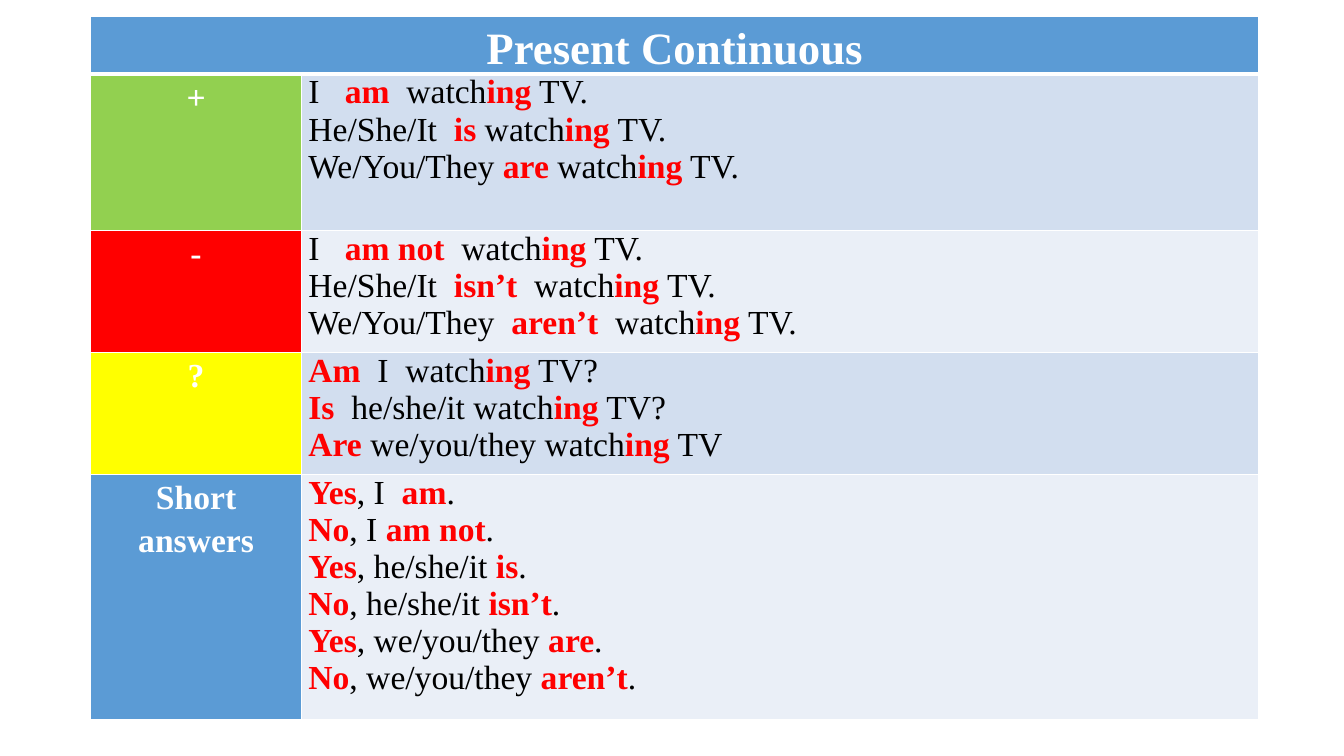
from dataclasses import dataclass

from lxml import etree
from pptx import Presentation
from pptx.dml.color import RGBColor
from pptx.enum.text import MSO_ANCHOR, PP_ALIGN
from pptx.oxml.ns import qn
from pptx.table import _Cell
from pptx.util import Pt

CENTER = PP_ALIGN.CENTER
LEFT = PP_ALIGN.LEFT
TOP = MSO_ANCHOR.TOP

FONT = "Times New Roman"
COLORS = {
    "white": "FFFFFF",
    "black": "000000",
    "red": "FF0000",
    "green": "92D050",
    "yellow": "FFFF00",
    "blue": "5B9BD5",
    "dark band": "D2DEEF",
    "light band": "EAEFF7",
}
COLUMN_WIDTHS = (150.5, 684)
HEADER_HEIGHT = 40.4
THIN, THICK = 1, 3
MARK = "*"


@dataclass(frozen=True)
class GrammarRow:
    label: str
    label_fill: str
    sentence_fill: str
    height: float
    sentences: tuple[str, ...]


GRAMMAR_ROWS = (
    GrammarRow("+", "green", "dark band", 111.6, (
        "I   *am*  watch*ing* TV.",
        "He/She/It  *is* watch*ing* TV.",
        "We/You/They *are* watch*ing* TV.",
    )),
    GrammarRow("-", "red", "light band", 87.1, (
        "I   *am not  *watch*ing* TV.",
        "He/She/It  *isn’t*  watch*ing* TV.",
        "We/You/They  *aren’t*  watch*ing* TV.",
    )),
    GrammarRow("?", "yellow", "dark band", 87.1, (
        "*Am*  I  watch*ing* TV?",
        "*Is*  he/she/it watch*ing* TV?",
        "*Are* we/you/they watch*ing* TV",
    )),
    GrammarRow("Short answers", "blue", "light band", 175.2, (
        "*Yes*, I  *am*.",
        "*No*, I *am not*.",
        "*Yes*, he/she/it *is*.",
        "*No*, he/she/it *isn’t*.",
        "*Yes*, we/you/they *are*.",
        "*No*, we/you/they *aren’t*.",
    )),
)


def style_cell(cell: _Cell, fill: str, top: float = THIN, bottom: float = THIN) -> None:
    properties = cell._tc.get_or_add_tcPr()
    widths = {"a:lnL": THIN, "a:lnR": THIN, "a:lnT": top, "a:lnB": bottom}
    for side, width in widths.items():
        line = etree.SubElement(properties, qn(side), w=str(Pt(width)))
        solid = etree.SubElement(line, qn("a:solidFill"))
        etree.SubElement(solid, qn("a:srgbClr"), val=COLORS["white"])
    cell.fill.solid()
    cell.fill.fore_color.rgb = RGBColor.from_string(COLORS[fill])
    cell.margin_left = cell.margin_right = Pt(5)
    cell.margin_top = cell.margin_bottom = Pt(0)
    cell.vertical_anchor = TOP


def write_lines(cell: _Cell, lines: tuple[str, ...], plain: str, size: float = 24,
                bold: bool = False, align: PP_ALIGN = LEFT, spacing: float = 1.0) -> None:
    frame = cell.text_frame
    for number, line in enumerate(lines):
        para = frame.add_paragraph() if number else frame.paragraphs[0]
        para.alignment = align
        para.line_spacing = spacing
        for position, words in enumerate(line.split(MARK)):
            if not words:
                continue
            marked = position % 2 == 1
            span = para.add_run()
            span.text = words
            span.font.name = FONT
            span.font.size = Pt(size)
            span.font.bold = bold or marked
            span.font.color.rgb = RGBColor.from_string(COLORS["red" if marked else plain])


def write_heading(cell: _Cell, words: str, size: float = 24) -> None:
    write_lines(cell, (words,), "white", size, bold=True, align=CENTER, spacing=1.15)


def main() -> None:
    deck = Presentation()
    deck.slide_width, deck.slide_height = Pt(960), Pt(540)
    page = deck.slides.add_slide(deck.slide_layouts[6])

    heights = (HEADER_HEIGHT, *(row.height for row in GRAMMAR_ROWS))
    table = page.shapes.add_table(
        len(heights), len(COLUMN_WIDTHS), Pt(64.8), Pt(12),
        Pt(sum(COLUMN_WIDTHS)), Pt(sum(heights)),
    ).table
    table.first_row = table.horz_banding = False
    for column, width in zip(table.columns, COLUMN_WIDTHS):
        column.width = Pt(width)
    for table_row, height in zip(table.rows, heights):
        table_row.height = Pt(height)

    for cell in table.rows[0].cells:
        style_cell(cell, "blue", bottom=THICK)
    table.cell(0, 0).merge(table.cell(0, 1))
    write_heading(table.cell(0, 0), "Present Continuous", 32)

    for number, row in enumerate(GRAMMAR_ROWS, start=1):
        label, sentences = table.rows[number].cells
        top = THICK if number == 1 else THIN
        style_cell(label, row.label_fill, top)
        style_cell(sentences, row.sentence_fill, top)
        write_heading(label, row.label)
        write_lines(sentences, row.sentences, "black")

    deck.save("out.pptx")


if __name__ == "__main__":
    main()
